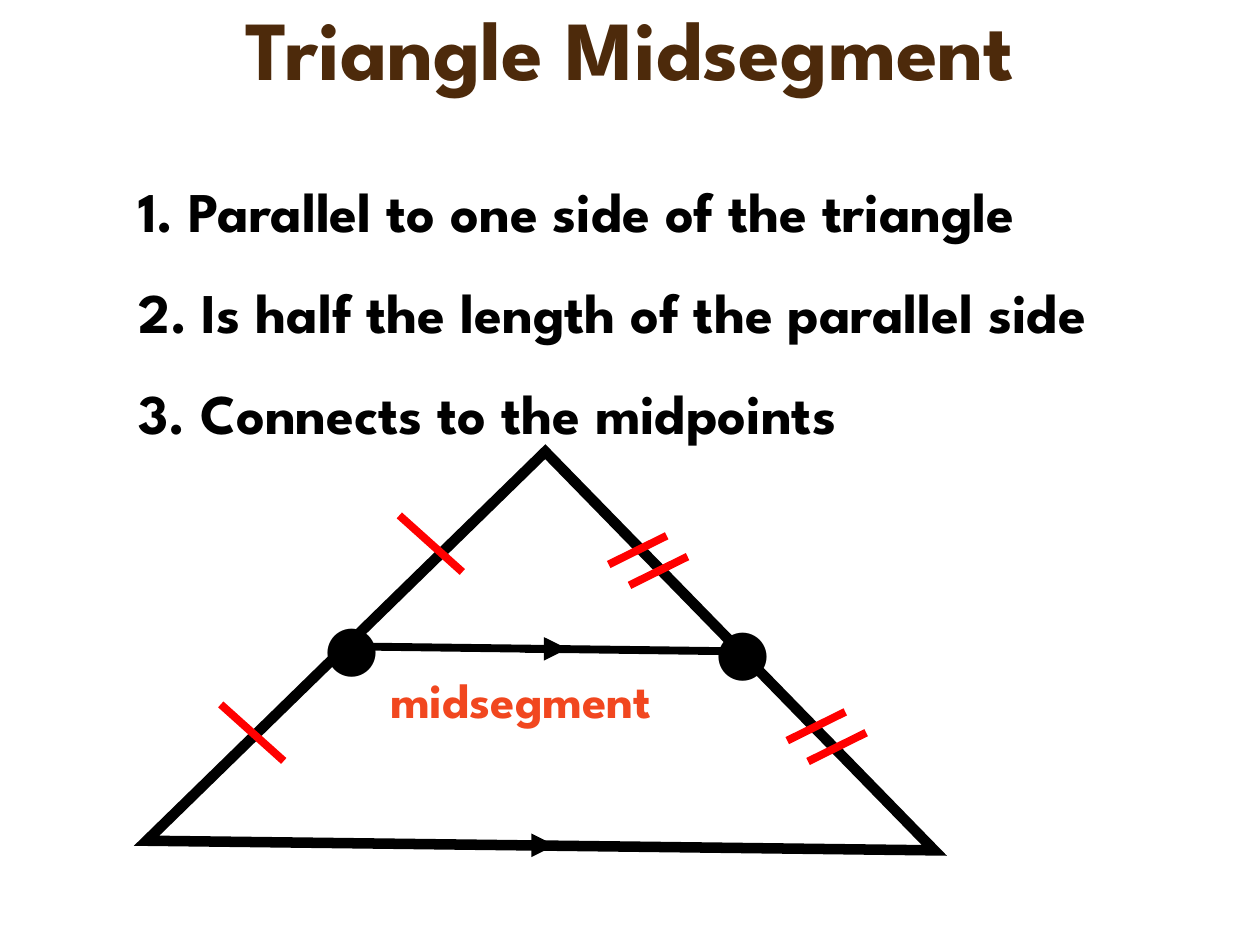
from pptx import Presentation
from pptx.dml.color import RGBColor
from pptx.enum.shapes import MSO_CONNECTOR, MSO_SHAPE
from pptx.enum.text import MSO_ANCHOR, PP_ALIGN
from pptx.oxml.ns import qn
from pptx.util import Cm, Pt
from lxml.etree import SubElement

COLORS = {"title": "4D2A0B", "black": "000000", "tick": "FF0000", "label": "F1471F"}
FONT = "League Spartan"

presentation = Presentation()
presentation.slide_width, presentation.slide_height = Cm(25.4), Cm(19.05)
slide = presentation.slides.add_slide(presentation.slide_layouts[6])


def add_text(box, lines, size, color, bold=True, spacing=1.0,
             align=PP_ALIGN.LEFT, anchor=MSO_ANCHOR.TOP, tab=None):
    shape = slide.shapes.add_textbox(*[Cm(length) for length in box])
    frame = shape.text_frame
    frame.word_wrap = True
    frame.vertical_anchor = anchor
    for index, line in enumerate(lines):
        paragraph = frame.add_paragraph() if index else frame.paragraphs[0]
        if tab:
            tabs = SubElement(paragraph._p.get_or_add_pPr(), qn("a:tabLst"))
            SubElement(tabs, qn("a:tab"), pos=str(Cm(tab)), algn="l")
        paragraph.alignment = align
        paragraph.line_spacing = spacing
        run = paragraph.add_run()
        run.text = line
        run.font.name = FONT
        run.font.size = Pt(size)
        run.font.bold = bold
        run.font.color.rgb = RGBColor.from_string(COLORS[color])


def add_line(x, y, dx, dy, color="black", arrow=False):
    connector = slide.shapes.add_connector(
        MSO_CONNECTOR.STRAIGHT, Cm(x), Cm(y), Cm(x + dx), Cm(y + dy))
    connector.line.width = Pt(4.5)
    connector.line.color.rgb = RGBColor.from_string(COLORS[color])
    if arrow:
        SubElement(connector.line._get_or_add_ln(), qn("a:tailEnd"), type="triangle")
    SubElement(connector._element.spPr, qn("a:effectLst"))


# Title
add_text((0, 0, 25.4, 2.11), ["Triangle Midsegment"], 48, "title",
         spacing=0.9, align=PP_ALIGN.CENTER, anchor=MSO_ANCHOR.BOTTOM)

# Triangle with sharp corners, and its midsegment
triangle = slide.shapes.add_shape(
    MSO_SHAPE.RIGHT_TRIANGLE, Cm(5.28), Cm(11.43), Cm(11.23), Cm(11.23))
triangle.rotation = 135.7
triangle.shadow.inherit = False
triangle.fill.background()
triangle.line.width = Pt(6)
triangle.line.color.rgb = RGBColor.from_string(COLORS["black"])
SubElement(triangle.line._get_or_add_ln(), qn("a:miter"), lim="800000")
add_line(6.99, 13.03, 7.92, 0.1)

# Single ticks on the left side
for x, y in [(8.05, 10.39), (4.45, 14.2)]:
    add_line(x, y, 1.27, 1.14, "tick")

# Double ticks on the right side
for x, y in [(13.44, 10.8), (17.04, 14.35)]:
    for offset in (0, 0.42):
        add_line(x + offset, y + offset, -1.17, 0.58, "tick")

# Properties
add_text((0, 2.76, 24.13, 6.4),
         ["\t1. Parallel to one side of the triangle",
          "\t2. Is half the length of the parallel side",
          "\t3. Connects to the midpoints"],
         32, "black", spacing=1.5, tab=2.54)

# Midsegment label
add_text((7.62, 13.37, 8.69, 1.45), ["midsegment"], 28, "label")

# Arrows marking the parallel sides
for x, y in [(10.59, 13.08), (10.34, 17.04)]:
    add_line(x, y, 0.85, 0, arrow=True)

# Midpoints
for x, y in [(6.29, 12.11), (14.17, 12.19)]:
    add_text((x, y, 1.47, 1.8), ["●"], 36, "black", bold=False)

presentation.save("out.pptx")
